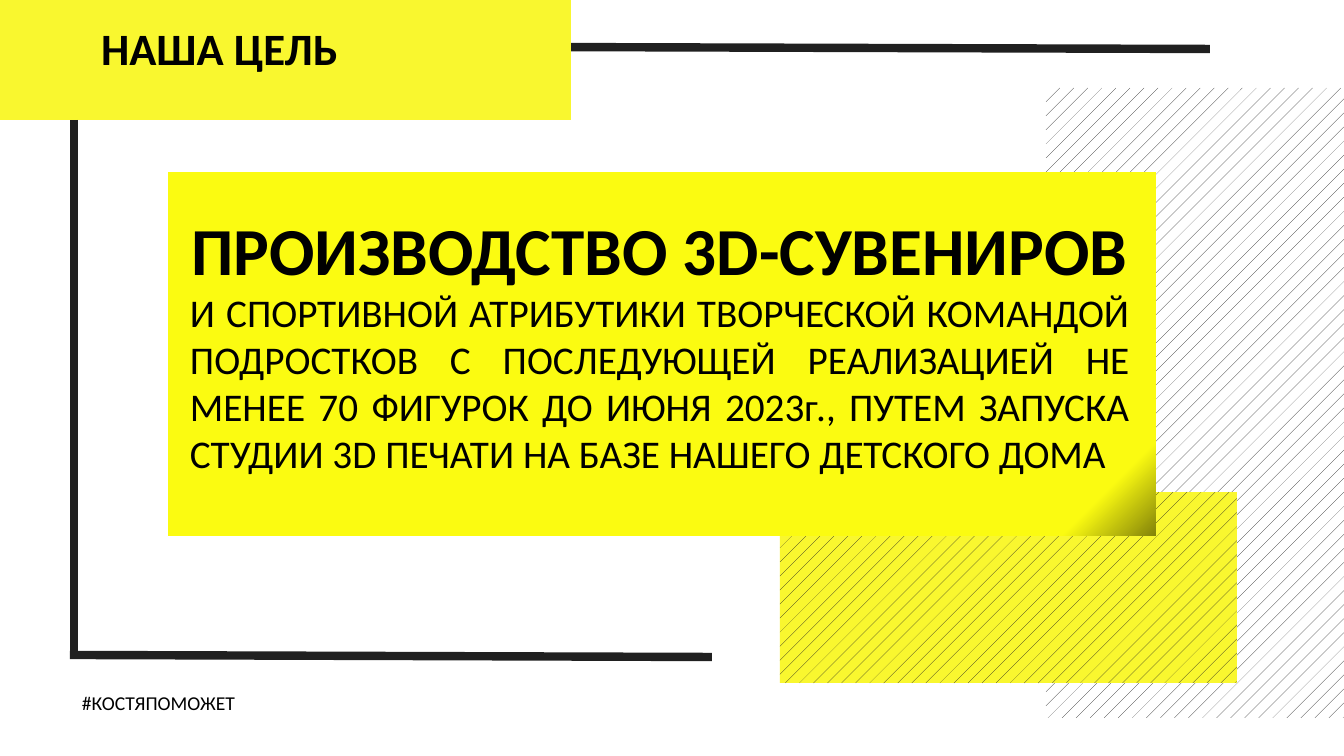
from pptx import Presentation
from pptx.dml.color import RGBColor
from pptx.enum.dml import MSO_PATTERN
from pptx.enum.shapes import MSO_CONNECTOR, MSO_SHAPE
from pptx.enum.text import MSO_ANCHOR, MSO_AUTO_SIZE, PP_ALIGN
from pptx.oxml.ns import qn
from pptx.util import Pt
from lxml import etree

LEFT, CENTER, JUSTIFY = PP_ALIGN.LEFT, PP_ALIGN.CENTER, PP_ALIGN.JUSTIFY
PAGE_WIDTH, PAGE_HEIGHT = 1344, 756
EMU_PER_PX = 12192000 / PAGE_WIDTH
FONT = "Calibri"
BLACK, DARK, WHITE, YELLOW = "000000", "202020", "FFFFFF", "F9F72F"

# Boxes are left, top, width, height in px
HATCHED = [((1046, 88, 298, 630), WHITE), ((780, 492, 457, 191), YELLOW)]
HEADER_BOX = (-4, -3, 575, 123)
CARD_BOX = (480, -140, 364, 988)  # before its quarter turn
CARD_STOPS = [(0.93, "FBFB11"), (1, "838309")]

# Lines are x1, y1, x2, y2 in px
TOP_LINE = (542, 47, 1210, 49)
CORNER_LINES = [(74, 120, 74, 659), (70, 655, 712, 657)]

# Paragraphs are text, size, bold, alignment
TITLE_BOX = (91, 16, 480, 65)
TITLE = [("НАША ЦЕЛЬ", 32, True, LEFT)]
TEXTS = [
    ((180, 203, 959, 281), [
        ("ПРОИЗВОДСТВО 3D-СУВЕНИРОВ", 48, True, CENTER),
        ("И СПОРТИВНОЙ АТРИБУТИКИ ТВОРЧЕСКОЙ КОМАНДОЙ ПОДРОСТКОВ "
         "С ПОСЛЕДУЮЩЕЙ РЕАЛИЗАЦИЕЙ НЕ МЕНЕЕ 70 ФИГУРОК ДО ИЮНЯ 2023г., "
         "ПУТЕМ ЗАПУСКА СТУДИИ 3D ПЕЧАТИ НА БАЗЕ НАШЕГО ДЕТСКОГО ДОМА",
         28, False, JUSTIFY),
    ]),
    ((30, 686, 257, 34), [("#КОСТЯПОМОЖЕТ", 14, False, CENTER)]),
]


def px(*lengths):
    return [round(length * EMU_PER_PX) for length in lengths]


def color(value):
    return RGBColor.from_string(value)


def add_rectangle(page, box):
    rectangle = page.shapes.add_shape(MSO_SHAPE.RECTANGLE, *px(*box))
    rectangle.shadow.inherit = False
    rectangle.line.fill.background()
    return rectangle


def add_hatched(page, box, background):
    fill = add_rectangle(page, box).fill
    fill.patterned()
    fill.pattern = MSO_PATTERN.PERCENT_5
    fill.fore_color.rgb = color(DARK)
    fill.back_color.rgb = color(background)


def add_header(page):
    header = add_rectangle(page, HEADER_BOX)
    header.fill.solid()
    header.fill.fore_color.rgb = color(YELLOW)
    return header


def add_card(page):
    card = add_rectangle(page, CARD_BOX)
    card.rotation = 90
    card.fill.gradient()
    card.fill.gradient_angle = 45
    for stop, (position, value) in zip(card.fill.gradient_stops, CARD_STOPS):
        stop.position = position
        stop.color.rgb = color(value)


def add_line(page, ends):
    line = page.shapes.add_connector(MSO_CONNECTOR.STRAIGHT, *px(*ends))
    line.line.color.rgb = color(DARK)
    line.line.width = Pt(6)
    etree.SubElement(line.element.spPr, qn("a:effectLst"))


def write(shape, paragraphs):
    frame = shape.text_frame
    frame.word_wrap = True
    frame.auto_size = MSO_AUTO_SIZE.SHAPE_TO_FIT_TEXT
    frame.vertical_anchor = MSO_ANCHOR.TOP
    frame.text = "\n".join(paragraph[0] for paragraph in paragraphs)
    for para, (_, size, bold, alignment) in zip(frame.paragraphs, paragraphs):
        para.alignment = alignment
        para.font.name = FONT
        para.font.size = Pt(size)
        para.font.bold = bold
        para.font.color.rgb = color(BLACK)


def main():
    deck = Presentation()
    deck.slide_width, deck.slide_height = px(PAGE_WIDTH, PAGE_HEIGHT)
    page = deck.slides.add_slide(deck.slide_layouts[5])

    for box, background in HATCHED:
        add_hatched(page, box, background)
    add_line(page, TOP_LINE)
    header = add_header(page)
    add_card(page)
    for ends in CORNER_LINES:
        add_line(page, ends)

    title = page.shapes.title
    title.left, title.top, title.width, title.height = px(*TITLE_BOX)
    write(title, TITLE)
    header.element.addnext(title.element)  # in front of the header
    for box, paragraphs in TEXTS:
        write(page.shapes.add_textbox(*px(*box)), paragraphs)

    deck.save("out.pptx")


if __name__ == "__main__":
    main()
